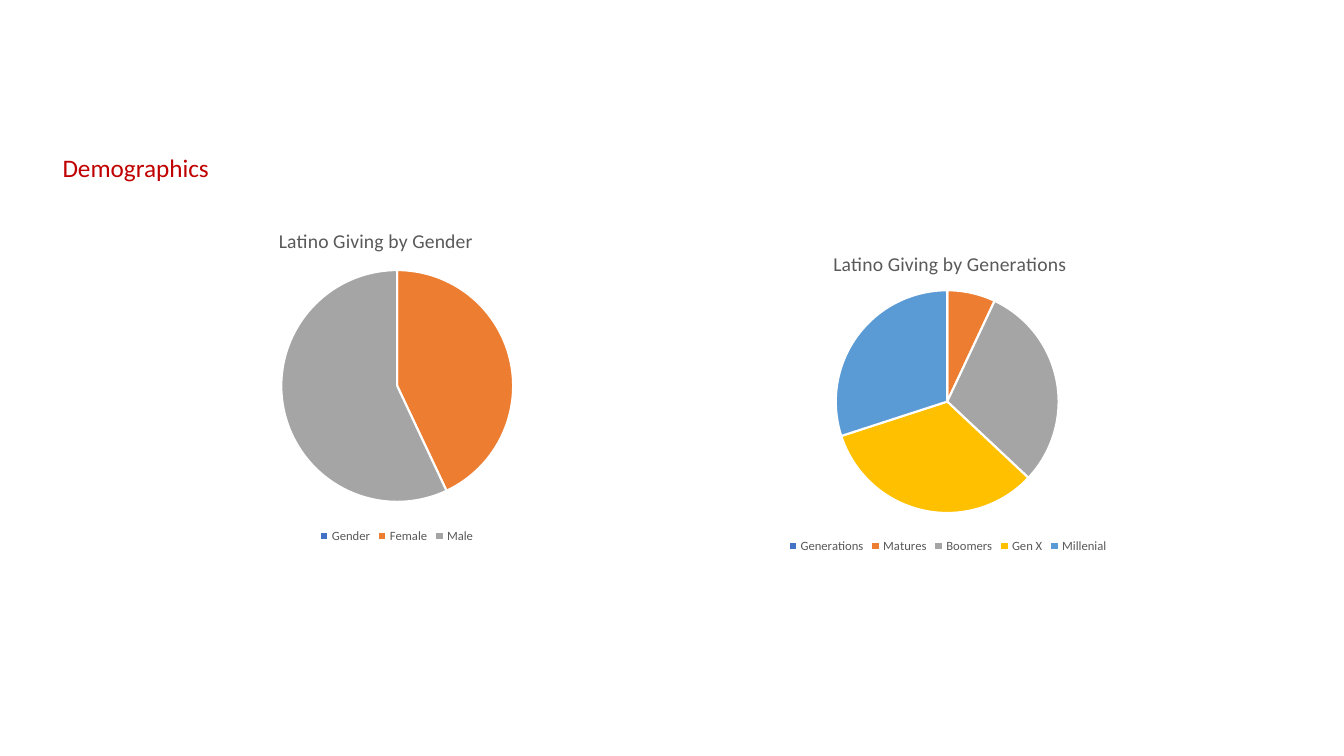
from dataclasses import dataclass

from lxml import etree
from pptx import Presentation
from pptx.chart.data import CategoryChartData
from pptx.dml.color import RGBColor
from pptx.enum.chart import XL_CHART_TYPE, XL_LEGEND_POSITION
from pptx.enum.text import MSO_ANCHOR, PP_ALIGN
from pptx.oxml.ns import qn
from pptx.util import Inches, Pt

PIE = XL_CHART_TYPE.PIE
BOTTOM = XL_LEGEND_POSITION.BOTTOM
TOP = MSO_ANCHOR.TOP
LEFT = PP_ALIGN.LEFT


@dataclass(frozen=True)
class Theme:
    font: str = "Calibri"
    heading: str = "C00000"
    muted: str = "595959"
    line: str = "FFFFFF"
    slices: tuple = ("4472C4", "ED7D31", "A5A5A5", "FFC000", "5B9BD5")
    heading_size: float = 18
    chart_title_size: float = 14
    legend_size: float = 9


THEME = Theme()


def format_font(font, size, color):
    font.name = THEME.font
    font.size = Pt(size)
    font.bold = False
    font.color.rgb = RGBColor.from_string(color)


def write_text(tf, text, *, size, color, align=LEFT):
    p = tf.paragraphs[0]
    p.alignment = align
    r = p.add_run()
    r.text = text
    format_font(r.font, size, color)


def set_layout(parent, index, **settings):
    old = parent.find(qn("c:layout"))
    if old is not None:
        parent.remove(old)
    layout = etree.Element(qn("c:layout"))
    manual = etree.SubElement(layout, qn("c:manualLayout"))
    for tag, value in settings.items():
        etree.SubElement(manual, qn(f"c:{tag}")).set("val", str(value))
    parent.insert(index, layout)


def add_heading(slide, text, left, top, width, height):
    sp = slide.shapes.title
    sp.left, sp.top = Inches(left), Inches(top)
    sp.width, sp.height = Inches(width), Inches(height)
    tf = sp.text_frame
    tf.word_wrap = True
    tf.vertical_anchor = TOP
    tf.paragraphs[0].line_spacing = 1.0
    write_text(tf, text, size=THEME.heading_size, color=THEME.heading)


def add_pie(slide, title, shares, box, title_at, pie_at, diameter):
    left, top, width, height = box
    data = CategoryChartData()
    data.categories = list(shares)
    data.add_series("Series 1", list(shares.values()))
    chart = slide.shapes.add_chart(
        PIE, Inches(left), Inches(top), Inches(width), Inches(height), data
    ).chart
    chart.font.name = THEME.font

    chart.has_title = True
    write_text(chart.chart_title.text_frame, title,
               size=THEME.chart_title_size, color=THEME.muted)
    chart.chart_title.include_in_layout = False
    set_layout(chart.chart_title.element, 1, xMode="edge", yMode="edge",
               x=(title_at[0] - left) / width, y=(title_at[1] - top) / height)

    chart.has_legend = True
    chart.legend.position = BOTTOM
    chart.legend.include_in_layout = False
    format_font(chart.legend.font, THEME.legend_size, THEME.muted)

    plot = chart.plots[0]
    plot.vary_by_categories = True
    for i in range(len(shares)):
        fmt = plot.series[0].points[i].format
        fmt.fill.solid()
        fmt.fill.fore_color.rgb = RGBColor.from_string(THEME.slices[i])
        fmt.line.color.rgb = RGBColor.from_string(THEME.line)
        fmt.line.width = Pt(1.5)
    plot_area = chart.element.find(".//" + qn("c:plotArea"))
    set_layout(plot_area, 0, layoutTarget="inner", xMode="edge", yMode="edge",
               x=(pie_at[0] - left) / width, y=(pie_at[1] - top) / height,
               w=diameter / width, h=diameter / height)


def main():
    prs = Presentation()
    prs.slide_width, prs.slide_height = Inches(13.33), Inches(7.5)
    slide = prs.slides.add_slide(prs.slide_layouts[5])
    add_pie(slide, "Latino Giving by Gender",
            {"Gender": None, "Female": 43, "Male": 57},
            box=(1.36, 2.08, 5.15, 3.35), title_at=(2.73, 2.22),
            pie_at=(2.79, 2.68), diameter=2.3)
    add_pie(slide, "Latino Giving by Generations",
            {"Generations": None, "Matures": 7, "Boomers": 30,
             "Gen X": 33, "Millenial": 30},
            box=(6.82, 2.28, 5.16, 3.25), title_at=(8.23, 2.45),
            pie_at=(8.29, 2.88), diameter=2.21)
    add_heading(slide, "Demographics", 0.52, 1.46, 6.85, 0.4)
    prs.save("out.pptx")


if __name__ == "__main__":
    main()
